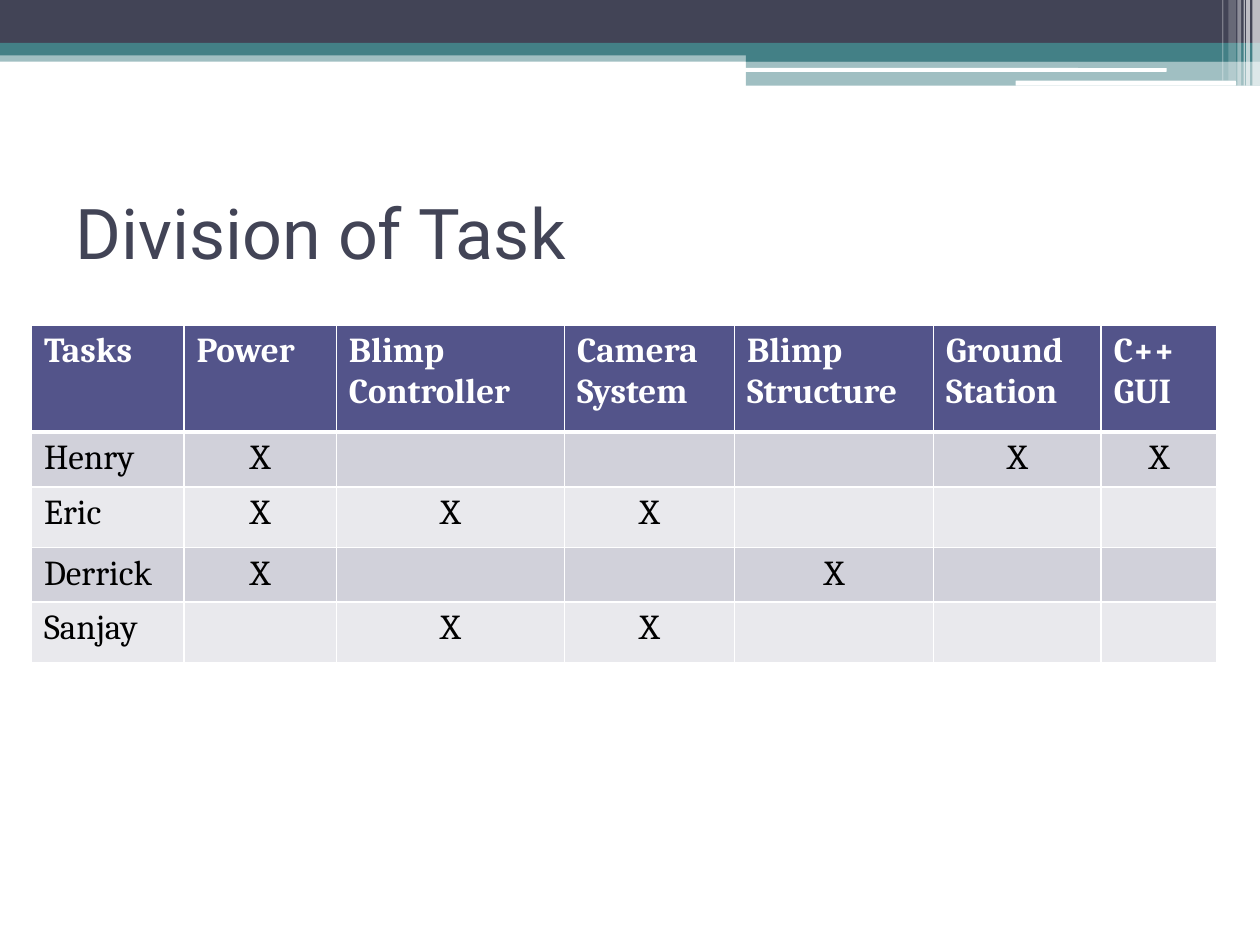
from lxml.etree import SubElement
from pptx import Presentation
from pptx.dml.color import RGBColor
from pptx.enum.shapes import MSO_SHAPE
from pptx.enum.text import MSO_ANCHOR, PP_ALIGN
from pptx.oxml.ns import qn
from pptx.util import Inches, Pt

WHITE, BLACK, SLATE, TEAL, INDIGO = "FFFFFF", "000000", "424456", "438086", "53548A"
BANDS = ("D1D1DA", "E9E9ED")


def colour(value):
    return RGBColor.from_string(value)


class SlideStyle:
    """Holds the fonts and the current slide, and draws each kind of element."""

    title_format = {"name": "Roboto", "size": Pt(40), "bold": False}
    body_format = {"name": "Cambria", "size": Pt(20), "bold": False}
    header_format = {**body_format, "bold": True}

    def __init__(self, page):
        self.page = page

    def add_text(self, frame, text, values, text_colour, align=PP_ALIGN.LEFT):
        for number, line in enumerate(text.split("\n")):
            para = frame.add_paragraph() if number else frame.paragraphs[0]
            para.alignment = align
            span = para.add_run()
            span.text = line
            for name, value in values.items():
                setattr(span.font, name, value)
            span.font.color.rgb = colour(text_colour)

    def bar(self, left, top, width, height, fill, opacity=100, rounded=False):
        kind = MSO_SHAPE.ROUNDED_RECTANGLE if rounded else MSO_SHAPE.RECTANGLE
        box = self.page.shapes.add_shape(
            kind, Inches(left), Inches(top), Inches(width), Inches(height))
        box.shadow.inherit = False
        box.line.fill.background()
        box.fill.solid()
        box.fill.fore_color.rgb = colour(fill)
        if opacity < 100:
            shade = box.fill._xPr.find(qn("a:solidFill"))[0]
            SubElement(shade, qn("a:alpha"), val=str(opacity * 1000))

    def title(self, text, left, top, width, height):
        box = self.page.shapes.add_textbox(
            Inches(left), Inches(top), Inches(width), Inches(height))
        box.text_frame.word_wrap = True
        box.text_frame.vertical_anchor = MSO_ANCHOR.MIDDLE
        self.add_text(box.text_frame, text, self.title_format, SLATE)

    def borders(self, cell, widths):
        properties = cell._tc.get_or_add_tcPr()
        for side, width in widths.items():
            line = SubElement(properties, qn(f"a:ln{side}"), w=str(Pt(width)))
            fill = SubElement(line, qn("a:solidFill"))
            SubElement(fill, qn("a:srgbClr"), val=WHITE)

    def table(self, rows, left, top, widths, heights):
        grid = self.page.shapes.add_table(
            len(rows), len(widths), Inches(left), Inches(top),
            Inches(sum(widths)), Inches(sum(heights))).table
        grid.horz_banding = False
        for column, width in zip(grid.columns, widths):
            column.width = Inches(width)
        for row, height in zip(grid.rows, heights):
            row.height = Inches(height)
        for r, texts in enumerate(rows):
            for c, text in enumerate(texts):
                cell = grid.cell(r, c)
                # The header is set off by a thicker rule below it
                self.borders(cell, {"L": 1, "R": 1, "T": 3 if r == 1 else 1,
                                    "B": 1 if r else 3})
                cell.fill.solid()
                cell.fill.fore_color.rgb = colour(BANDS[(r - 1) % 2] if r else INDIGO)
                if text:
                    self.add_text(cell.text_frame, text,
                                  self.body_format if r else self.header_format,
                                  BLACK if r else WHITE,
                                  PP_ALIGN.CENTER if r and c else PP_ALIGN.LEFT)


def main():
    deck = Presentation()
    deck.slide_width, deck.slide_height = Inches(10), Inches(7.5)
    style = SlideStyle(deck.slides.add_slide(deck.slide_layouts[6]))

    # Bands across the top
    style.bar(0, 0.4, 10, 0.09, TEAL, 50)
    style.bar(0, 0, 10, 0.34, SLATE)
    style.bar(0, 0.34, 10, 0.1, TEAL)
    style.bar(5.92, 0.39, 4.08, 0.1, TEAL)
    style.bar(5.92, 0.48, 4.08, 0.2, TEAL, 50)
    style.bar(5.91, 0.54, 3.35, 0.03, WHITE, rounded=True)
    style.bar(8.06, 0.64, 1.75, 0.04, WHITE, rounded=True)

    # Translucent stripes in the right corner
    for left, width, height, opacity in (
            (9.94, 0.06, 0.68, 65), (9.89, 0.03, 0.68, 65), (9.87, 0.01, 0.68, 60),
            (9.82, 0.03, 0.68, 40), (9.75, 0.06, 0.64, 20), (9.7, 0.01, 0.64, 30)):
        style.bar(left, 0, width, height, WHITE, opacity)

    style.title("Division of Task", 0.5, 1.25, 9, 1.17)

    # Who works on which task
    tasks = ["Power", "Blimp\nController", "Camera\nSystem", "Blimp Structure",
             "Ground Station", "C++ GUI"]
    members = {"Henry": (0, 4, 5), "Eric": (0, 1, 2), "Derrick": (0, 3), "Sanjay": (1, 2)}
    rows = [["Tasks", *tasks]]
    for member, assigned in members.items():
        rows.append([member] + ["X" if t in assigned else "" for t in range(len(tasks))])
    style.table(rows, 0.25, 2.58, [1.21, 1.21, 1.81, 1.35, 1.58, 1.33, 0.92],
                [0.85, 0.42, 0.48, 0.42, 0.48])

    deck.save("out.pptx")


if __name__ == "__main__":
    main()
